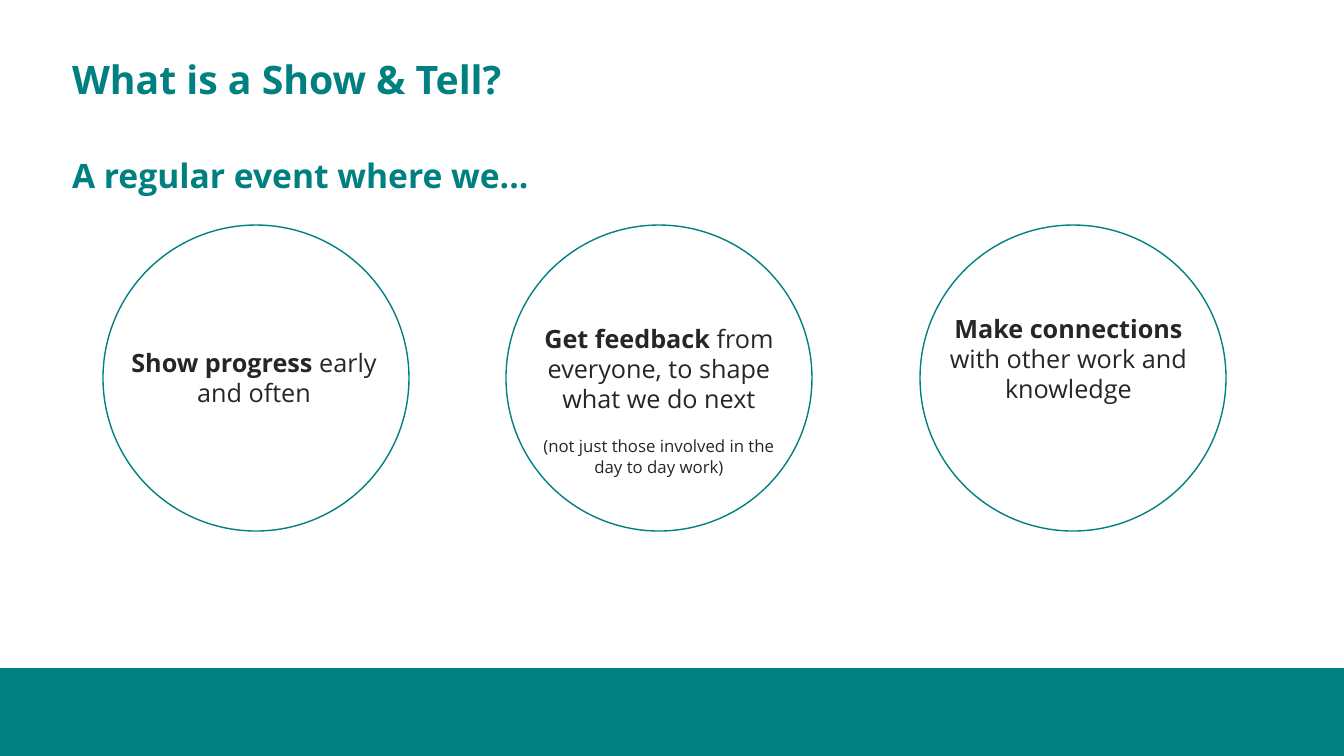
from pptx import Presentation
from pptx.dml.color import RGBColor
from pptx.enum.shapes import MSO_SHAPE as Shape
from pptx.enum.text import MSO_ANCHOR as Anchor, MSO_AUTO_SIZE as Fit, PP_ALIGN as Align
from pptx.util import Emu, Pt

TEAL, INK = "008080", "262626"
FONT = "Open Sans"
WIDE, HIGH = 1344, 756
SIZE = 306

# circle left edge, text box within the circle, paragraphs of (text, size, bold)
AIMS = [
    (103, (17, 117, 268, 72),
     [[("Show progress ", 18, True), ("early and often", 18, False)]]),
    (506, (19, 93, 268, 163),
     [[("Get feedback ", 18, True),
       ("from everyone, to shape what we do next", 18, False)],
      [("(not just those involved in the day to day work)", 12, False)]]),
    (920, (1, 83, 295, 132),
     [[("Make connections ", 18, True),
       ("with other work and knowledge", 18, False)]]),
]
HEAD = [[("What is a Show & Tell?", 28, True)],
        [("A regular event where we...", 24, True)]]


def px(*nums):
    return [Emu(round(n * 914400 / 100.8)) for n in nums]


def paint(part, tone):
    """Set a fill or a font to a hex colour."""
    if hasattr(part, "solid"):
        part.solid()
        part.fore_color.rgb = RGBColor.from_string(tone)
    else:
        part.color.rgb = RGBColor.from_string(tone)


def write(frame, paras, tone, align, gap):
    """Add the paragraphs run by run, gap points apart."""
    frame.word_wrap = True
    frame.auto_size = Fit.NONE
    frame.vertical_anchor = Anchor.TOP
    for i, runs in enumerate(paras):
        para = frame.add_paragraph() if i else frame.paragraphs[0]
        para.alignment = align
        para.space_before = Pt(gap if i else 0)
        for text, size, bold in runs:
            run = para.add_run()
            run.text = text
            run.font.name = FONT
            run.font.size = Pt(size)
            run.font.bold = bold
            paint(run.font, tone)


def head(slide, x, y, w, h):
    title = slide.shapes.title
    title.left, title.top, title.width, title.height = px(x, y, w, h)
    write(title.text_frame, HEAD, TEAL, Align.LEFT, 38)


def aim(slide, x, y, size, box, paras):
    """Draw a ring with its text placed relative to the ring."""
    ring = slide.shapes.add_shape(Shape.OVAL, *px(x, y, size, size))
    ring.shadow.inherit = False
    ring.fill.background()
    ring.line.width = Pt(1)
    paint(ring.line.fill, TEAL)
    dx, dy, w, h = box
    note = slide.shapes.add_textbox(*px(x + dx, y + dy, w, h))
    write(note.text_frame, paras, INK, Align.CENTER, 16)


def band(slide, x, y, w, h):
    bar = slide.shapes.add_shape(Shape.RECTANGLE, *px(x, y, w, h))
    bar.shadow.inherit = False
    paint(bar.fill, TEAL)
    bar.line.fill.background()


def main():
    deck = Presentation()
    deck.slide_width, deck.slide_height = px(WIDE, HIGH)
    slide = deck.slides.add_slide(deck.slide_layouts[5])
    head(slide, 62, 50, 885, 146)
    for left, box, paras in AIMS:
        aim(slide, left, 225, SIZE, box, paras)
    band(slide, 0, 668, WIDE, HIGH - 668)
    deck.save("out.pptx")


if __name__ == "__main__":
    main()
